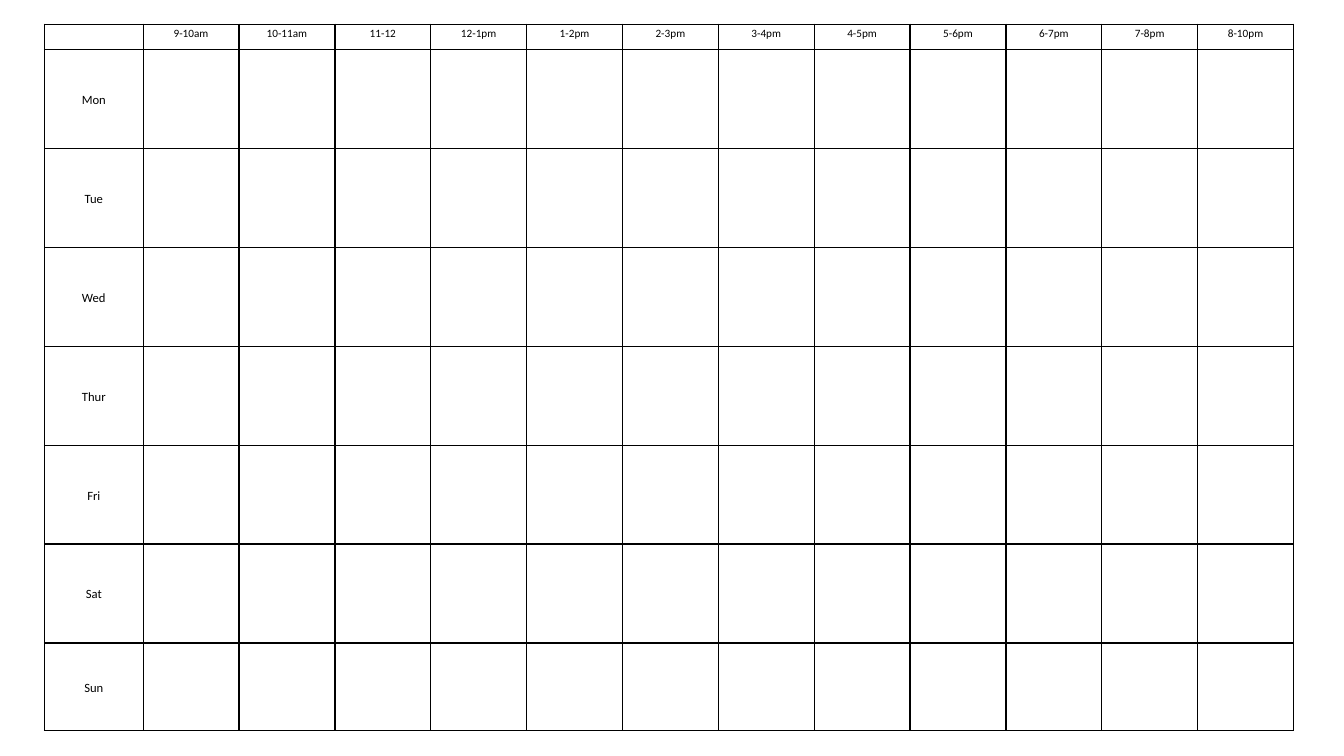
from dataclasses import dataclass

from lxml import etree
from pptx import Presentation
from pptx.dml.color import RGBColor
from pptx.enum import text
from pptx.oxml import ns
from pptx.util import Inches, Pt


@dataclass(frozen=True)
class Theme:
    font: str = "Calibri"
    ink: str = "000000"
    hour_size: int = 8
    day_size: int = 9
    border: int = 1


THEME = Theme()
HOURS = ["9-10am", "10-11am", "11-12", "12-1pm", "1-2pm", "2-3pm",
         "3-4pm", "4-5pm", "5-6pm", "6-7pm", "7-8pm", "8-10pm"]
DAYS = ["Mon", "Tue", "Wed", "Thur", "Fri", "Sat", "Sun"]
CELL_FORMAT = {"margin_left": Inches(0.06), "margin_right": Inches(0.06),
               "margin_top": 0, "margin_bottom": 0}
HOUR_FORMAT = {"space_before": Pt(6), "space_after": Pt(6)}
DAY_FORMAT = {"space_after": Pt(10)}
PARA_FORMAT = {"alignment": text.PP_ALIGN.CENTER, "line_spacing": 1.15}


def apply_format(target, values):
    for name, value in values.items():
        setattr(target, name, value)


def add_borders(cell):
    properties = cell._tc.get_or_add_tcPr()
    for position, side in enumerate(("lnL", "lnR", "lnT", "lnB")):
        line = etree.Element(ns.qn(f"a:{side}"), w=str(Pt(THEME.border)))
        fill = etree.SubElement(line, ns.qn("a:solidFill"))
        etree.SubElement(fill, ns.qn("a:srgbClr"), val=THEME.ink)
        properties.insert(position, line)


def write_label(cell, label, size, para_format):
    para = cell.text_frame.paragraphs[0]
    apply_format(para, PARA_FORMAT | para_format)
    span = para.add_run()
    span.text = label
    apply_format(span.font, {"name": THEME.font, "size": Pt(size)})
    span.font.color.rgb = RGBColor.from_string(THEME.ink)


def prepare_cell(cell):
    apply_format(cell, CELL_FORMAT)
    cell.fill.background()
    add_borders(cell)
    para = cell.text_frame.paragraphs[0]
    etree.SubElement(para._p, ns.qn("a:endParaRPr"), sz=str(THEME.hour_size * 100))


def add_timetable(page, left, top, width, height):
    day_width, hour_height, sunday_height = Inches(0.98), Inches(0.25), Inches(0.87)
    hour_width = (width - day_width) // len(HOURS)
    day_height = (height - hour_height - sunday_height) // (len(DAYS) - 1)
    table = page.shapes.add_table(len(DAYS) + 1, len(HOURS) + 1,
                                  left, top, width, height).table
    apply_format(table, {"first_row": False, "horz_banding": False})
    for column, size in zip(table.columns, [day_width] + [hour_width] * len(HOURS)):
        column.width = size
    heights = [hour_height] + [day_height] * (len(DAYS) - 1) + [sunday_height]
    for row, size in zip(table.rows, heights):
        row.height = size
    for cell in table.iter_cells():
        prepare_cell(cell)
    for column, hour in enumerate(HOURS, 1):
        write_label(table.cell(0, column), hour, THEME.hour_size, HOUR_FORMAT)
    for row, day in enumerate(DAYS, 1):
        cell = table.cell(row, 0)
        cell.vertical_anchor = text.MSO_ANCHOR.MIDDLE
        write_label(cell, day, THEME.day_size, DAY_FORMAT)


def main():
    deck = Presentation()
    apply_format(deck, {"slide_width": Inches(13.33), "slide_height": Inches(7.5)})
    page = deck.slides.add_slide(deck.slide_layouts[6])
    add_timetable(page, Inches(0.44), Inches(0.24), Inches(12.39), Inches(7.01))
    deck.save("out.pptx")


if __name__ == "__main__":
    main()
